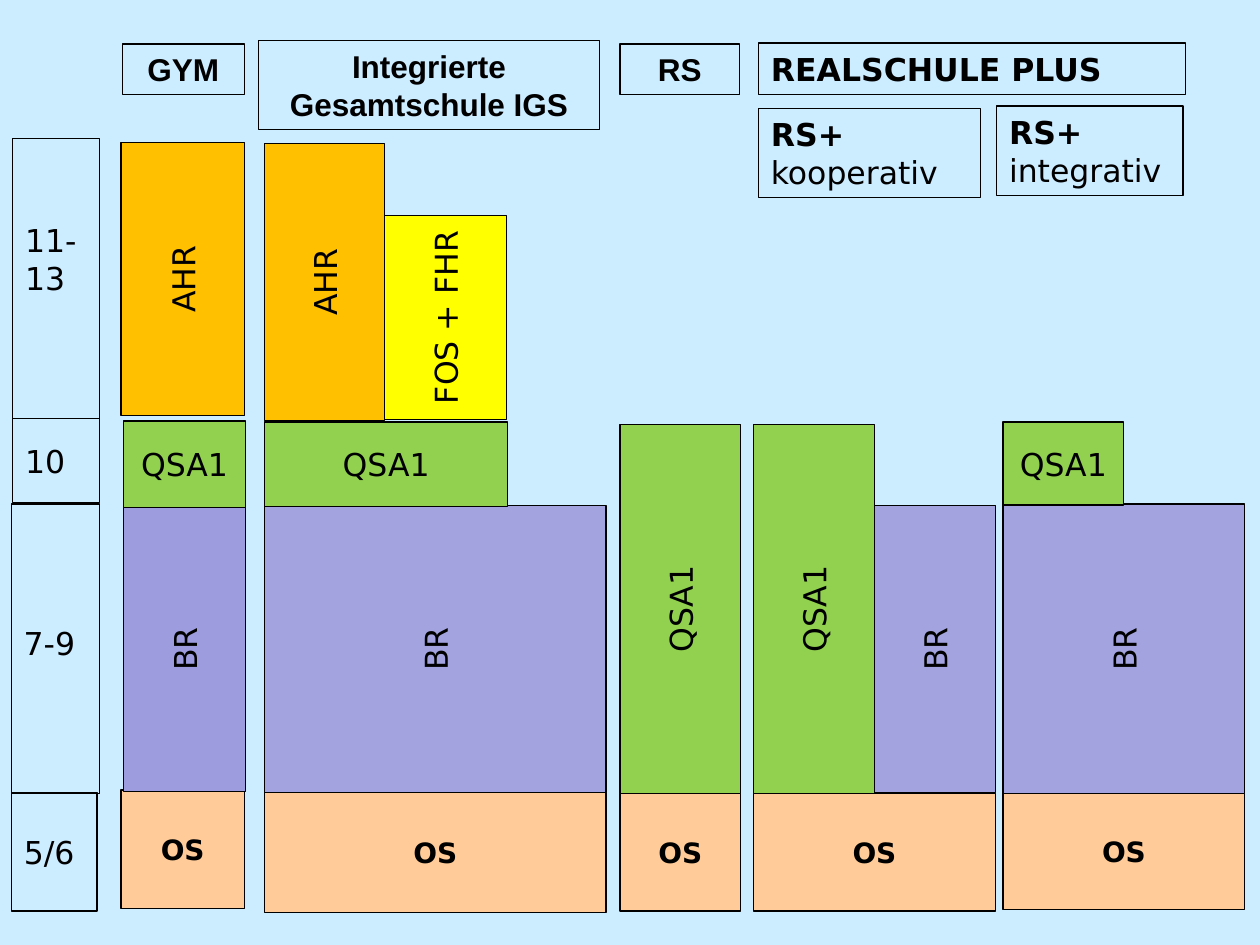
from dataclasses import dataclass

from pptx import Presentation
from pptx.dml.color import RGBColor
from pptx.enum.shapes import MSO_SHAPE
from pptx.enum.text import MSO_ANCHOR, PP_ALIGN
from pptx.util import Inches, Pt

RECTANGLE = MSO_SHAPE.RECTANGLE
MIDDLE = MSO_ANCHOR.MIDDLE
LEFT = PP_ALIGN.LEFT
CENTER = PP_ALIGN.CENTER


@dataclass(frozen=True)
class Theme:
    background: str = "CCECFF"
    ink: str = "000000"
    orientation: str = "FFCC99"
    vocational: str = "A3A3E0"
    vocational_gym: str = "9C9CDF"
    secondary: str = "92D050"
    technical: str = "FFFF00"
    university: str = "FFC000"
    body_font: str = "DejaVu Sans"
    school_font: str = "Arial"
    body_size: int = 18
    orientation_size: int = 16
    line_width: float = 0.75


THEME = Theme()

ORIENTATION_STAGES = [
    (0.96, 6.27, 0.98, 0.94),
    (2.1, 6.29, 2.71, 0.95),
    (4.92, 6.3, 0.96, 0.93),
    (5.98, 6.3, 1.92, 0.93),
    (7.96, 6.29, 1.92, 0.93),
]

UPRIGHT_BLOCKS = [
    ("QSA1", THEME.secondary, (4.92, 3.37, 0.96, 2.93)),
    ("QSA1", THEME.secondary, (5.98, 3.37, 0.96, 2.93)),
    ("BR", THEME.vocational, (6.94, 4.01, 0.96, 2.28)),
    ("FOS + FHR", THEME.technical, (3.05, 1.71, 0.97, 1.62)),
    ("AHR", THEME.university, (2.1, 1.14, 0.95, 2.2)),
    ("AHR", THEME.university, (0.96, 1.13, 0.98, 2.17)),
    ("BR", THEME.vocational, (2.1, 4.01, 2.71, 2.28)),
    ("BR", THEME.vocational, (7.96, 4, 1.92, 2.3)),
    ("BR", THEME.vocational_gym, (0.98, 4.02, 0.97, 2.26)),
]

YEAR_TEN_BLOCKS = [
    (2.1, 3.35, 1.93, 0.67),
    (7.96, 3.35, 0.96, 0.66),
    (0.98, 3.34, 0.97, 0.69),
]

YEARS = [
    ("5/6", (0.09, 6.29, 0.68, 0.94), 0.05),
    ("7-9", (0.09, 4, 0.7, 2.3), 0.15),
    ("10", (0.1, 3.32, 0.69, 0.67), 0.05),
    ("11-13", (0.1, 1.1, 0.69, 2.22), 0.36),
]

SCHOOLS = [
    ("GYM", (0.97, 0.35, 0.97, 0.4)),
    ("Integrierte Gesamtschule IGS", (2.05, 0.32, 2.71, 0.71)),
    ("RS", (4.92, 0.35, 0.95, 0.4)),
]

REALSCHULE_PLUS = [
    ("REALSCHULE PLUS", "", (6.02, 0.34, 3.39, 0.41)),
    ("RS+", " kooperativ", (6.02, 0.86, 1.76, 0.71)),
    ("RS+", " integrativ", (7.91, 0.84, 1.48, 0.71)),
]


def color(value):
    return RGBColor.from_string(value)


def add_box(slide, bounds, fill=None, bottom_inset=0.05):
    box = slide.shapes.add_shape(RECTANGLE, *map(Inches, bounds))
    box.shadow.inherit = False
    if fill:
        box.fill.solid()
        box.fill.fore_color.rgb = color(fill)
    else:
        box.fill.background()
    box.line.color.rgb = color(THEME.ink)
    box.line.width = Pt(THEME.line_width)
    frame_format = {
        "word_wrap": True,
        "vertical_anchor": MIDDLE,
        "margin_bottom": Inches(bottom_inset),
    }
    for name, value in frame_format.items():
        setattr(box.text_frame, name, value)
    return box


def write(box, text, align=CENTER, **changes):
    paragraph = box.text_frame.paragraphs[0]
    paragraph.alignment = align
    run = paragraph.add_run()
    run.text = text
    run.font.color.rgb = color(THEME.ink)
    font_format = {
        "name": THEME.body_font,
        "size": Pt(THEME.body_size),
        "bold": False,
        **changes,
    }
    for name, value in font_format.items():
        setattr(run.font, name, value)


def add_orientation_stage(slide, bounds):
    stage = add_box(slide, bounds, THEME.orientation)
    write(stage, "OS", size=Pt(THEME.orientation_size), bold=True)


def add_upright_block(slide, text, fill, bounds):
    block = add_box(slide, bounds, fill)
    block.text_frame._txBody.bodyPr.set("vert", "vert270")
    write(block, text)


def add_year(slide, text, bounds, bottom_inset):
    write(add_box(slide, bounds, bottom_inset=bottom_inset), text, LEFT)


def add_school(slide, text, bounds):
    write(add_box(slide, bounds), text, name=THEME.school_font, bold=True)


def add_realschule_plus(slide, title, form, bounds):
    heading = add_box(slide, bounds)
    write(heading, title, LEFT, bold=True)
    if form:
        write(heading, form, LEFT)


def main():
    presentation = Presentation()
    presentation.slide_width = Inches(10)
    presentation.slide_height = Inches(7.5)
    slide = presentation.slides.add_slide(presentation.slide_layouts[6])
    slide.background.fill.solid()
    slide.background.fill.fore_color.rgb = color(THEME.background)

    for bounds in ORIENTATION_STAGES:
        add_orientation_stage(slide, bounds)
    for block in UPRIGHT_BLOCKS:
        add_upright_block(slide, *block)
    for bounds in YEAR_TEN_BLOCKS:
        write(add_box(slide, bounds, THEME.secondary), "QSA1")
    for year in YEARS:
        add_year(slide, *year)
    for heading in REALSCHULE_PLUS:
        add_realschule_plus(slide, *heading)
    for school in SCHOOLS:
        add_school(slide, *school)

    presentation.save("out.pptx")


if __name__ == "__main__":
    main()
